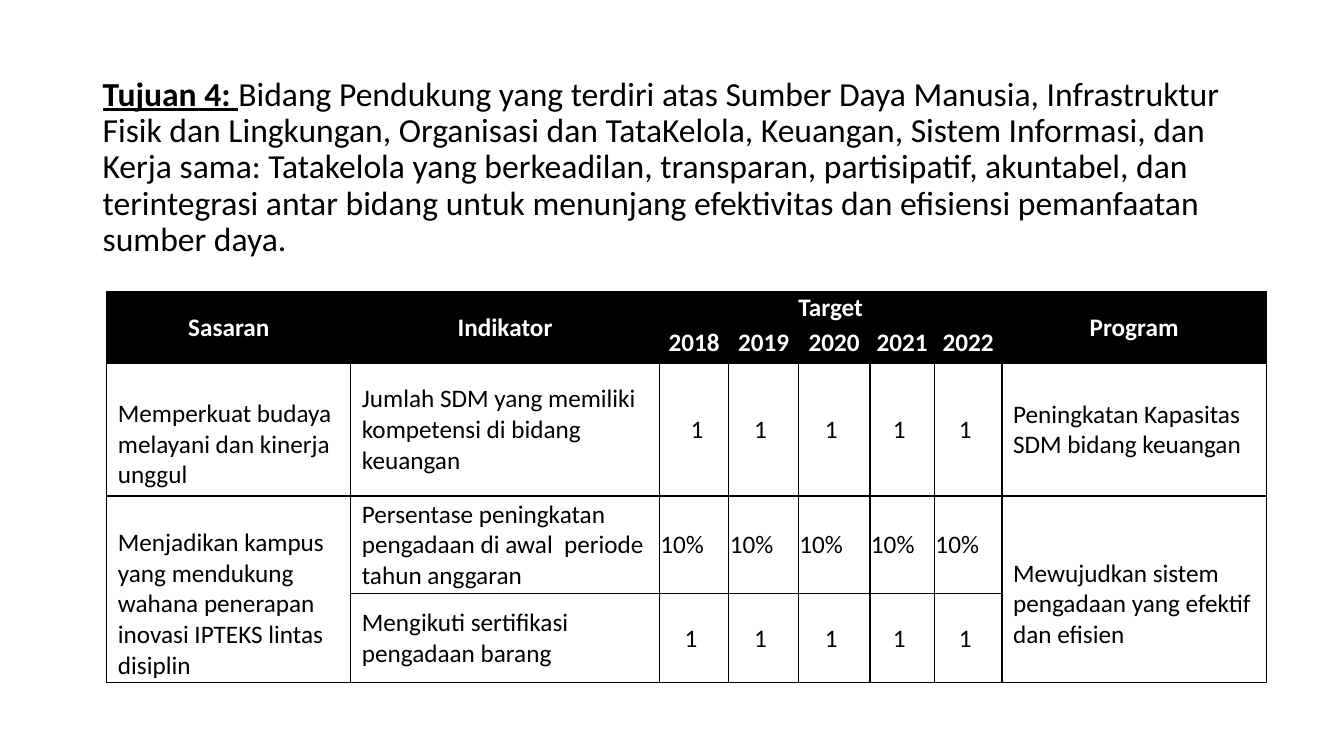
from lxml.etree import SubElement
from pptx import Presentation
from pptx.dml.color import RGBColor
from pptx.enum.text import MSO_ANCHOR, PP_ALIGN
from pptx.oxml.ns import qn
from pptx.util import Inches, Pt

BLACK = RGBColor(0x00, 0x00, 0x00)
WHITE = RGBColor(0xFF, 0xFF, 0xFF)
FONT = "Calibri"
LINE_HEIGHT = 0.3

COLUMN_WIDTHS = [2.42, 3.06, 0.69, 0.69, 0.71, 0.64, 0.67, 2.62]
ROW_HEIGHTS = [0.31, 0.4, 1.32, 0.97, 0.88]
HEADER_ROWS = 2
TARGET_COLUMNS = range(2, 7)

ROWS = [
    ["Sasaran", "Indikator", "Target", "", "", "", "", "Program"],
    ["", "", "2018", "2019", "2020", "2021", "2022", ""],
    ["Memperkuat budaya melayani dan kinerja unggul",
     "Jumlah SDM yang memiliki kompetensi di bidang keuangan",
     *["1"] * 5, "Peningkatan Kapasitas SDM bidang keuangan"],
    ["Menjadikan kampus yang mendukung wahana penerapan inovasi IPTEKS lintas disiplin",
     "Persentase peningkatan pengadaan di awal  periode tahun anggaran",
     *["10%"] * 5, "Mewujudkan sistem pengadaan yang efektif dan efisien"],
    ["", "Mengikuti sertifikasi pengadaan barang", *["1"] * 5, ""],
]
MERGES = [((0, 0), (1, 0)), ((0, 1), (1, 1)), ((0, 2), (0, 6)),
          ((0, 7), (1, 7)), ((3, 0), (4, 0)), ((3, 7), (4, 7))]
LOWERED_CELLS = [(2, 0), (3, 0), (3, 7)]


def add_borders(cell):
    properties = cell._tc.get_or_add_tcPr()
    for side in ("a:lnL", "a:lnR", "a:lnT", "a:lnB"):
        line = SubElement(properties, qn(side), w=str(Pt(1)))
        color = SubElement(SubElement(line, qn("a:solidFill")), qn("a:srgbClr"))
        color.set("val", str(BLACK))


def format_font(font, size, color, bold):
    font.name = FONT
    font.size = Pt(size)
    font.color.rgb = color
    font.bold = bold


presentation = Presentation()
presentation.slide_width = Inches(13.33)
presentation.slide_height = Inches(7.5)
slide = presentation.slides.add_slide(presentation.slide_layouts[6])

# Goal statement
goal = slide.shapes.add_textbox(Inches(0.92), Inches(1.31), Inches(11.5), Inches(0.71))
goal.text_frame.word_wrap = True
goal.text_frame.vertical_anchor = MSO_ANCHOR.MIDDLE
statement = goal.text_frame.paragraphs[0]
statement.line_spacing = 0.9
goal_number = statement.add_run()
goal_number.text = "Tujuan 4: "
format_font(goal_number.font, 24, BLACK, True)
goal_number.font.underline = True
goal_wording = statement.add_run()
goal_wording.text = (
    "Bidang Pendukung yang terdiri atas Sumber Daya Manusia, Infrastruktur Fisik dan "
    "Lingkungan, Organisasi dan TataKelola, Keuangan, Sistem Informasi, dan Kerja sama: "
    "Tatakelola yang berkeadilan, transparan, partisipatif, akuntabel, dan terintegrasi "
    "antar bidang untuk menunjang efektivitas dan efisiensi pemanfaatan sumber daya.")
format_font(goal_wording.font, 24, BLACK, False)

# Targets by year
targets = slide.shapes.add_table(
    len(ROW_HEIGHTS), len(COLUMN_WIDTHS), Inches(1.06), Inches(2.89),
    Inches(sum(COLUMN_WIDTHS)), Inches(sum(ROW_HEIGHTS))).table
targets.first_row = False
targets.horz_banding = False
for column, width in zip(targets.columns, COLUMN_WIDTHS):
    column.width = Inches(width)
for row, height in zip(targets.rows, ROW_HEIGHTS):
    row.height = Inches(height)

for r, texts in enumerate(ROWS):
    for c, text in enumerate(texts):
        cell = targets.cell(r, c)
        is_header = r < HEADER_ROWS
        add_borders(cell)
        if is_header:
            cell.fill.solid()
            cell.fill.fore_color.rgb = BLACK
        else:
            cell.fill.background()

        cell.vertical_anchor = MSO_ANCHOR.MIDDLE
        cell.margin_left = cell.margin_right = cell.margin_top = Inches(0.01)
        cell.margin_bottom = 0
        if (r, c) in LOWERED_CELLS:
            cell.margin_top = Inches(LINE_HEIGHT)

        cell.text_frame.text = text
        paragraph = cell.text_frame.paragraphs[0]
        format_font(paragraph.font, 18, WHITE if is_header else BLACK, is_header)
        for run in paragraph.runs:
            format_font(run.font, 18, WHITE if is_header else BLACK, is_header)
        if is_header:
            paragraph.alignment = PP_ALIGN.CENTER
        elif c not in TARGET_COLUMNS:
            cell.margin_left = Inches(0.11)
        elif text == "1":
            paragraph.alignment = PP_ALIGN.CENTER
            if (r, c) == (2, 2):
                cell.margin_left = Inches(0.07)
            else:
                cell.margin_right = Inches(0.07)

for first, last in MERGES:
    targets.cell(*first).merge(targets.cell(*last))

presentation.save("out.pptx")
